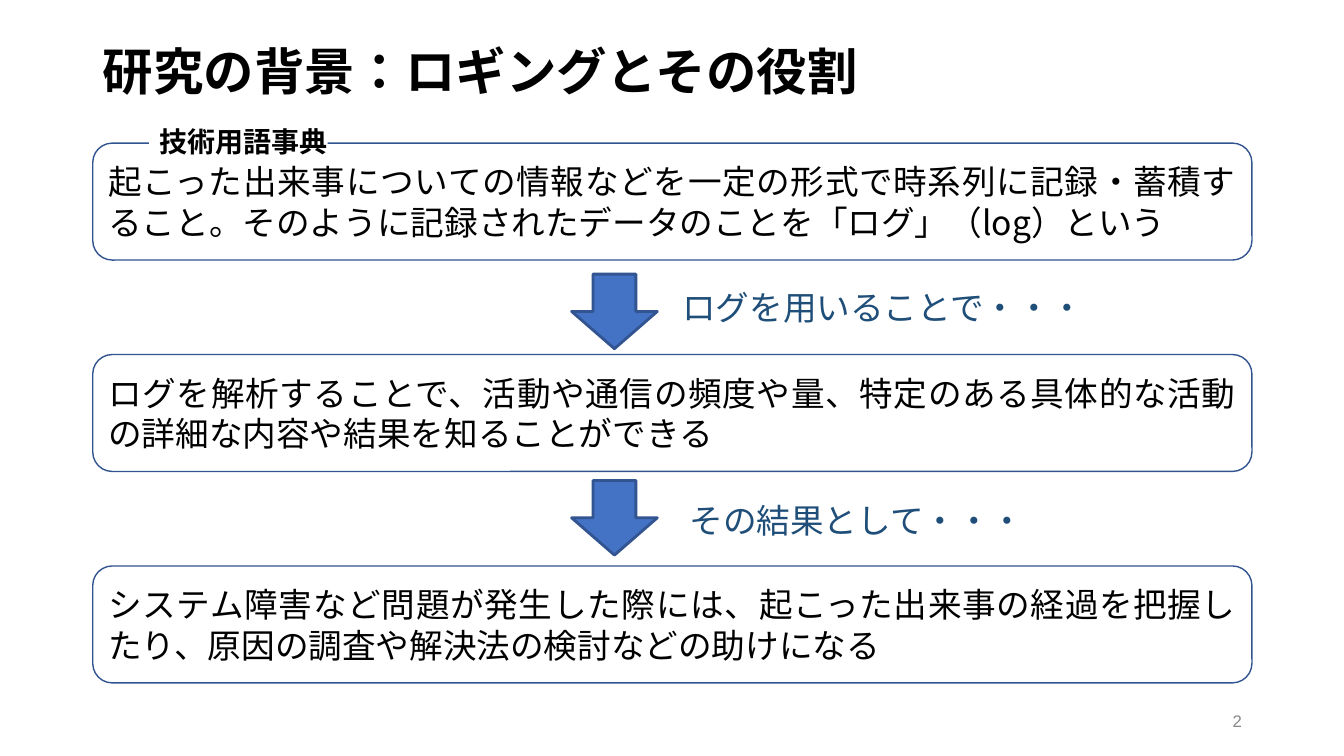
from dataclasses import dataclass

import lxml.etree
import pptx
import pptx.dml.color
import pptx.enum.lang
import pptx.enum.shapes
import pptx.enum.text
import pptx.oxml.ns
import pptx.util

SHAPES = pptx.enum.shapes.MSO_SHAPE
ALIGN = pptx.enum.text.PP_ALIGN
ANCHOR = pptx.enum.text.MSO_ANCHOR
WIDTH, HEIGHT = pptx.util.Inches(13.33), pptx.util.Inches(7.5)


@dataclass(frozen=True)
class Theme:
    paper: str = "FFFFFF"
    ink: str = "000000"
    link: str = "1F4E79"
    number: str = "888888"
    step_line: str = "31538F"
    arrow_fill: str = "4472C4"
    arrow_line: str = "325491"
    latin: str = "Arial"
    japanese: str = "Noto Sans CJK JP"
    title_size: int = 36
    body_size: int = 24
    tag_size: int = 20
    number_size: int = 12


THEME = Theme()


@dataclass(frozen=True)
class Box:
    """A place on a grid of 100 columns by 100 rows."""
    left: float
    top: float
    width: float
    height: float

    def inside(self, left, top, width, height):
        return Box(self.left + left, self.top + top, width, height)

    def lengths(self):
        return (int(WIDTH * self.left / 100), int(HEIGHT * self.top / 100),
                int(WIDTH * self.width / 100), int(HEIGHT * self.height / 100))


CONTENT = Box(6.9, 18.93, 86.25, 71.4)
STEP_HEIGHT = 15.47
STEP_PITCH = (CONTENT.height - STEP_HEIGHT) / 2
TAG = (4.2, -3.07, 13.28, 5.87)
ARROW_LEFT, ARROW_WIDTH, ARROW_HEIGHT = 35.63, 6.38, 9.87
LABEL_HEIGHT = 6.67

TAG_TEXT = "技術用語事典"
STEPS = [
    "起こった出来事についての情報などを一定の形式で時系列に記録・蓄積すること。"
    "そのように記録されたデータのことを「ログ」（log）という",
    "ログを解析することで、活動や通信の頻度や量、特定のある具体的な活動の詳細な内容や結果を知ることができる",
    "システム障害など問題が発生した際には、起こった出来事の経過を把握したり、"
    "原因の調査や解決法の検討などの助けになる",
]
# Label, arrow drop below the step's top, label left, drop and width
LINKS = [
    ("ログを用いることで・・・", 17.33, 43.13, 18.4, 39.53),
    ("その結果として・・・", 16.67, 43.66, 18.53, 28.58),
]


def color(value):
    return pptx.dml.color.RGBColor.from_string(value)


def write(shape, text, ink, size, latin, align=ALIGN.LEFT, anchor=ANCHOR.TOP,
          bold=False, wrap=True):
    frame = shape.text_frame
    frame_format = {"word_wrap": wrap, "vertical_anchor": anchor,
                    "auto_size": pptx.enum.text.MSO_AUTO_SIZE.NONE}
    for name, value in frame_format.items():
        setattr(frame, name, value)
    paragraph = frame.paragraphs[0]
    paragraph.alignment = align
    run = paragraph.add_run()
    run.text = text
    run.font.color.rgb = color(ink)
    font_format = {"size": pptx.util.Pt(size), "bold": bold, "name": latin,
                   "language_id": pptx.enum.lang.MSO_LANGUAGE_ID.JAPANESE}
    for name, value in font_format.items():
        setattr(run.font, name, value)
    # East Asian typeface
    properties = run.font._element
    east_asian = lxml.etree.SubElement(properties, pptx.oxml.ns.qn("a:ea"))
    east_asian.set("typeface", THEME.japanese)
    return paragraph


def add_shape(slide, kind, box, fill, line=None, line_width=0):
    shape = slide.shapes.add_shape(kind, *box.lengths())
    shape.shadow.inherit = False
    shape.fill.solid()
    shape.fill.fore_color.rgb = color(fill)
    if line:
        shape.line.color.rgb = color(line)
        shape.line.width = pptx.util.Pt(line_width)
    else:
        shape.line.fill.background()
    return shape


def place_title(slide, box):
    title = slide.shapes.title
    for name, value in zip(("left", "top", "width", "height"), box.lengths()):
        setattr(title, name, value)
    paragraph = write(title, "研究の背景：ロギングとその役割", THEME.ink, THEME.title_size,
                      THEME.latin, anchor=ANCHOR.MIDDLE, bold=True)
    paragraph.line_spacing = 0.9


def place_number(slide, box):
    number = slide.shapes.add_textbox(*box.lengths())
    write(number, "2", THEME.number, THEME.number_size, THEME.latin,
          align=ALIGN.RIGHT, anchor=ANCHOR.MIDDLE)


def place_step(slide, box, text):
    step = add_shape(slide, SHAPES.ROUNDED_RECTANGLE, box, THEME.paper,
                     THEME.step_line, 1)
    write(step, text, THEME.ink, THEME.body_size, THEME.japanese,
          align=ALIGN.JUSTIFY, anchor=ANCHOR.MIDDLE)


def place_tag(slide, box):
    tag = add_shape(slide, SHAPES.RECTANGLE, box, THEME.paper)
    write(tag, TAG_TEXT, THEME.ink, THEME.tag_size, THEME.latin, bold=True, wrap=False)


def place_link(slide, box, text, arrow_drop, label_left, label_drop, label_width):
    arrow_box = box.inside(ARROW_LEFT, arrow_drop, ARROW_WIDTH, ARROW_HEIGHT)
    add_shape(slide, SHAPES.DOWN_ARROW, arrow_box, THEME.arrow_fill,
              THEME.arrow_line, 2)
    label_box = box.inside(label_left, label_drop, label_width, LABEL_HEIGHT)
    label = slide.shapes.add_textbox(*label_box.lengths())
    write(label, text, THEME.link, THEME.body_size, THEME.japanese)


def place_flow(slide, box):
    step_boxes = [box.inside(0, STEP_PITCH * index, box.width, STEP_HEIGHT)
                  for index in range(len(STEPS))]
    # Steps and the source tag on the first one
    for step_box, text in zip(step_boxes, STEPS):
        place_step(slide, step_box, text)
    place_tag(slide, box.inside(*TAG))
    # Arrows between the steps
    for step_box, link in zip(step_boxes, LINKS):
        place_link(slide, step_box, *link)


def main():
    presentation = pptx.Presentation()
    presentation.slide_width, presentation.slide_height = WIDTH, HEIGHT
    slide = presentation.slides.add_slide(presentation.slide_layouts[5])
    place_title(slide, Box(CONTENT.left, 2.8, CONTENT.width, 14.13))
    place_flow(slide, CONTENT)
    place_number(slide, Box(70.65, 92.67, 22.5, 5.33))
    presentation.save("out.pptx")


if __name__ == "__main__":
    main()
